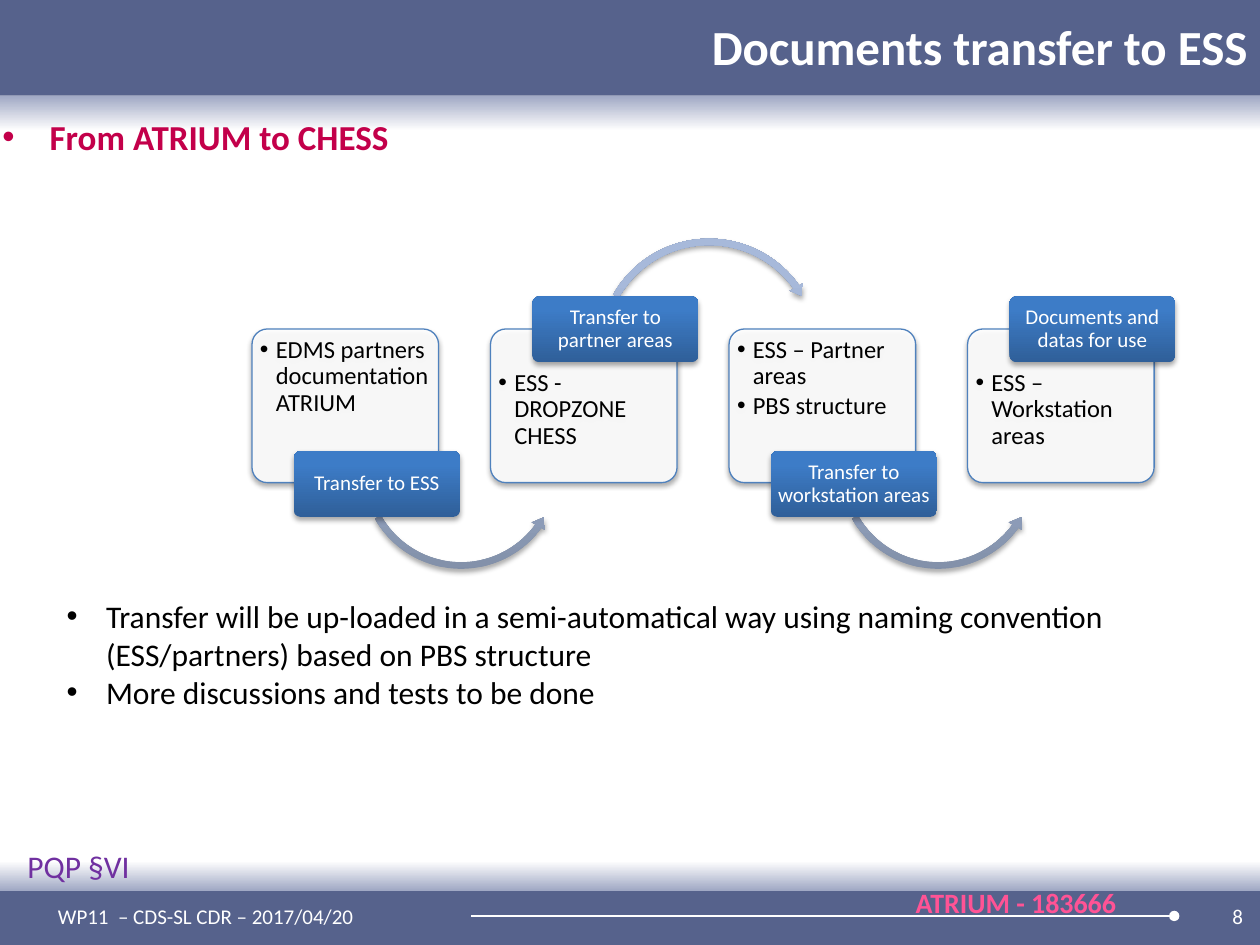
from lxml.etree import SubElement
from pptx import Presentation
from pptx.dml.color import RGBColor
from pptx.enum.shapes import MSO_CONNECTOR, MSO_SHAPE
from pptx.enum.text import MSO_ANCHOR, PP_ALIGN
from pptx.oxml import parse_xml
from pptx.oxml.ns import nsdecls, qn
from pptx.util import Pt

WHITE = RGBColor(0xFF, 0xFF, 0xFF)
BLACK = RGBColor(0, 0, 0)
SLATE = RGBColor(0x56, 0x62, 0x8C)
MIST = RGBColor(0xA0, 0xA8, 0xC4)
CRIMSON = RGBColor(0xC3, 0x00, 0x4A)
PINK = RGBColor(0xFF, 0x53, 0x95)
PURPLE = RGBColor(0x70, 0x30, 0xA0)
EDGE = RGBColor(0x4F, 0x81, 0xBD)
NAVY = RGBColor(0x2F, 0x5F, 0x99)
BLUE = RGBColor(0x3D, 0x7C, 0xC7)
STEEL = RGBColor(0x81, 0x8F, 0xA8)
SKY = RGBColor(0xA7, 0xB9, 0xDA)


def write(shape, text, size, color, bold=False, align=PP_ALIGN.LEFT,
          anchor=MSO_ANCHOR.TOP, indent=0):
    frame = shape.text_frame
    frame.word_wrap = True
    frame.vertical_anchor = anchor
    frame.text = text
    for para in frame.paragraphs:
        para.alignment = align
        if indent:
            props = para._p.get_or_add_pPr()
            props.set("marL", str(Pt(indent)))
            props.set("indent", str(-Pt(indent)))
            SubElement(props, qn("a:buFont")).set("typeface", "Arial")
            SubElement(props, qn("a:buChar")).set("char", "•")
        for run in para.runs:
            run.font.name = "Calibri"
            run.font.size = Pt(size)
            run.font.bold = bold
            run.font.color.rgb = color
    return frame


def shade(shape, start, end, stop, angle):
    shape.fill.gradient()
    shape.fill.gradient_angle = angle
    stops = shape.fill.gradient_stops
    stops[0].color.rgb = start
    stops[0].position = 0
    stops[1].color.rgb = end
    stops[1].position = stop
    shape.line.fill.background()


prs = Presentation()
prs.slide_width = Pt(720)
prs.slide_height = Pt(540)
slide = prs.slides.add_slide(prs.slide_layouts[5])
shapes = slide.shapes

for top, height, angle in [(0, 54.7, None), (509, 31, None),
                           (54.7, 20, 270), (492, 17, 90)]:
    band = shapes.add_shape(MSO_SHAPE.RECTANGLE, 0, Pt(top), Pt(720), Pt(height))
    band.shadow.inherit = False
    if angle:
        shade(band, MIST, WHITE, 1, angle)
    else:
        band.fill.solid()
        band.fill.fore_color.rgb = SLATE
        band.line.fill.background()

rule = shapes.add_connector(MSO_CONNECTOR.STRAIGHT,
                            Pt(269.3), Pt(523.4), Pt(671), Pt(523.4))
rule.line.color.rgb = WHITE
rule.line.width = Pt(1.5)
SubElement(rule.line._get_or_add_ln(), qn("a:tailEnd")).set("type", "oval")
SubElement(rule._element.spPr, qn("a:effectLst"))

title = shapes.title
title.left, title.top, title.width, title.height = Pt(76.3), Pt(-2), Pt(643.7), Pt(57)
write(title, "Documents transfer to ESS", 28, WHITE, True, PP_ALIGN.RIGHT, MSO_ANCHOR.MIDDLE)
title.element.getparent().append(title.element)

body = shapes.add_textbox(0, Pt(62.6), Pt(720), Pt(455))
frame = write(body, "From ATRIUM to CHESS", 20, CRIMSON, True, indent=27)
frame.margin_left = frame.margin_right = Pt(1.4)

LEFT, MID = PP_ALIGN.LEFT, MSO_ANCHOR.MIDDLE
labels = [
    (26, 509, 254, 29, "WP11  – CDS-SL CDR – 2017/04/20", 12, WHITE, False, LEFT, MID, 0),
    (549.3, 509, 168, 29, "8", 12, WHITE, False, PP_ALIGN.RIGHT, MID, 0),
    (516.2, 502.6, 155, 26.6, "ATRIUM - 183666", 16, PINK, True, LEFT, MSO_ANCHOR.TOP, 0),
    (8.6, 480.2, 155, 29, "PQP §VI", 18, PURPLE, False, LEFT, MSO_ANCHOR.TOP, 0),
    (31, 337.7, 657, 94.3,
     "Transfer will be up-loaded in a semi-automatical way using naming convention "
     "(ESS/partners) based on PBS structure\nMore discussions and tests to be done",
     18, BLACK, False, LEFT, MSO_ANCHOR.TOP, 22.5),
]
for left, top, width, height, *style in labels:
    label = shapes.add_textbox(Pt(left), Pt(top), Pt(width), Pt(height))
    write(label, *style)

steps = [
    ("EDMS partners documentation ATRIUM", "Transfer to ESS"),
    ("ESS - DROPZONE CHESS", "Transfer to partner areas"),
    ("ESS – Partner areas\nPBS structure", "Transfer to workstation areas"),
    ("ESS – Workstation areas", "Documents and datas for use"),
]
raised = []
for i, (note, action) in enumerate(steps):
    left = 144 + 136.3 * i
    upper = i % 2 == 1

    box = shapes.add_shape(MSO_SHAPE.ROUNDED_RECTANGLE,
                           Pt(left), Pt(188), Pt(106.6), Pt(87.8))
    box.adjustments[0] = 0.1
    box.fill.solid()
    box.fill.fore_color.rgb = WHITE
    tint = box._element.spPr.find(qn("a:solidFill"))[0]
    SubElement(tint, qn("a:alpha")).set("val", "90000")
    box.line.color.rgb = EDGE
    box.line.width = Pt(0.75)
    frame = write(box, note, 14, BLACK, indent=9)
    frame.margin_left, frame.margin_right = Pt(2), Pt(1)
    frame.margin_top, frame.margin_bottom = Pt(21 if upper else 2), Pt(0)
    for para in frame.paragraphs:
        para.line_spacing = 0.9
        para.space_after = Pt(2)
    raised.append(box)

    if i < len(steps) - 1:
        if upper:
            kind, shift, top, size = MSO_SHAPE.CIRCULAR_ARROW, 59.4, 133.9, 131
            bends = [0.028, 3.452, 194.793, 125.755, 0.033]
        else:
            kind, shift, top, size = MSO_SHAPE.LEFT_CIRCULAR_ARROW, 60.5, 209.5, 118
            bends = [0.032, 3.881, 21.636, 90.245, 0.037]
        arrow = shapes.add_shape(kind, Pt(left + shift), Pt(top), Pt(size), Pt(size))
        for j, bend in enumerate(bends):
            arrow.adjustments[j] = bend
        shade(arrow, STEEL, SKY, 0.8, 90)
        raised.append(arrow)

    tag = shapes.add_shape(MSO_SHAPE.ROUNDED_RECTANGLE, Pt(left + 24),
                           Pt(169.4 if upper else 257.8), Pt(94.8), Pt(37.6))
    tag.adjustments[0] = 0.1
    shade(tag, NAVY, BLUE, 0.8, 90)
    frame = write(tag, action, 12, WHITE, align=PP_ALIGN.CENTER, anchor=MID)
    frame.margin_left = frame.margin_right = Pt(2)
    frame.margin_top = frame.margin_bottom = Pt(1)
    frame.paragraphs[0].line_spacing = 0.9
    raised.append(tag)

for shape in raised:
    shape.shadow.inherit = False
    shape._element.spPr.find(qn("a:effectLst")).append(parse_xml(
        f'<a:outerShdw {nsdecls("a")} blurRad="{Pt(3.1)}" dist="{Pt(1.8)}" '
        'dir="5400000" rotWithShape="0"><a:srgbClr val="000000">'
        '<a:alpha val="35000"/></a:srgbClr></a:outerShdw>'))

prs.save("out.pptx")
